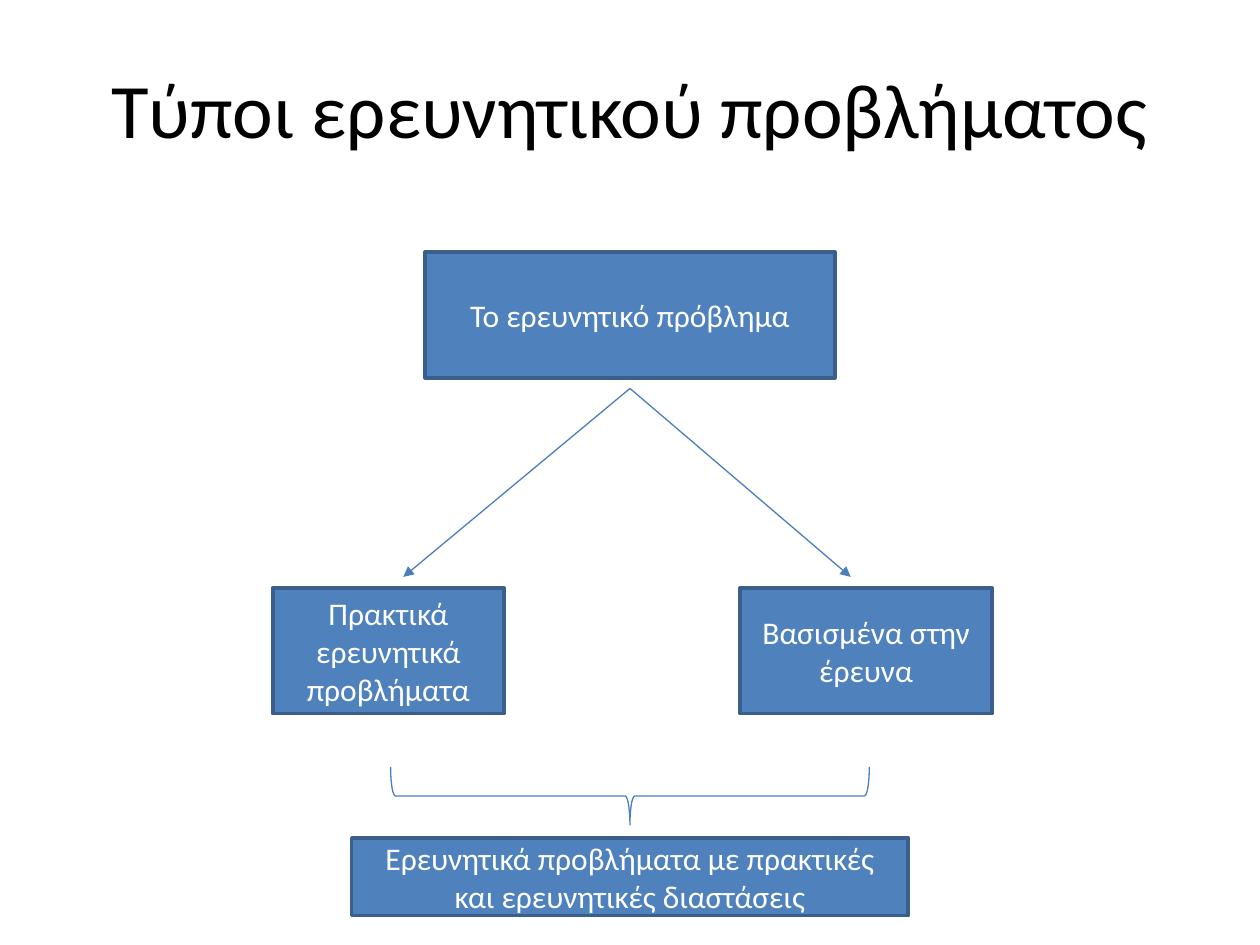
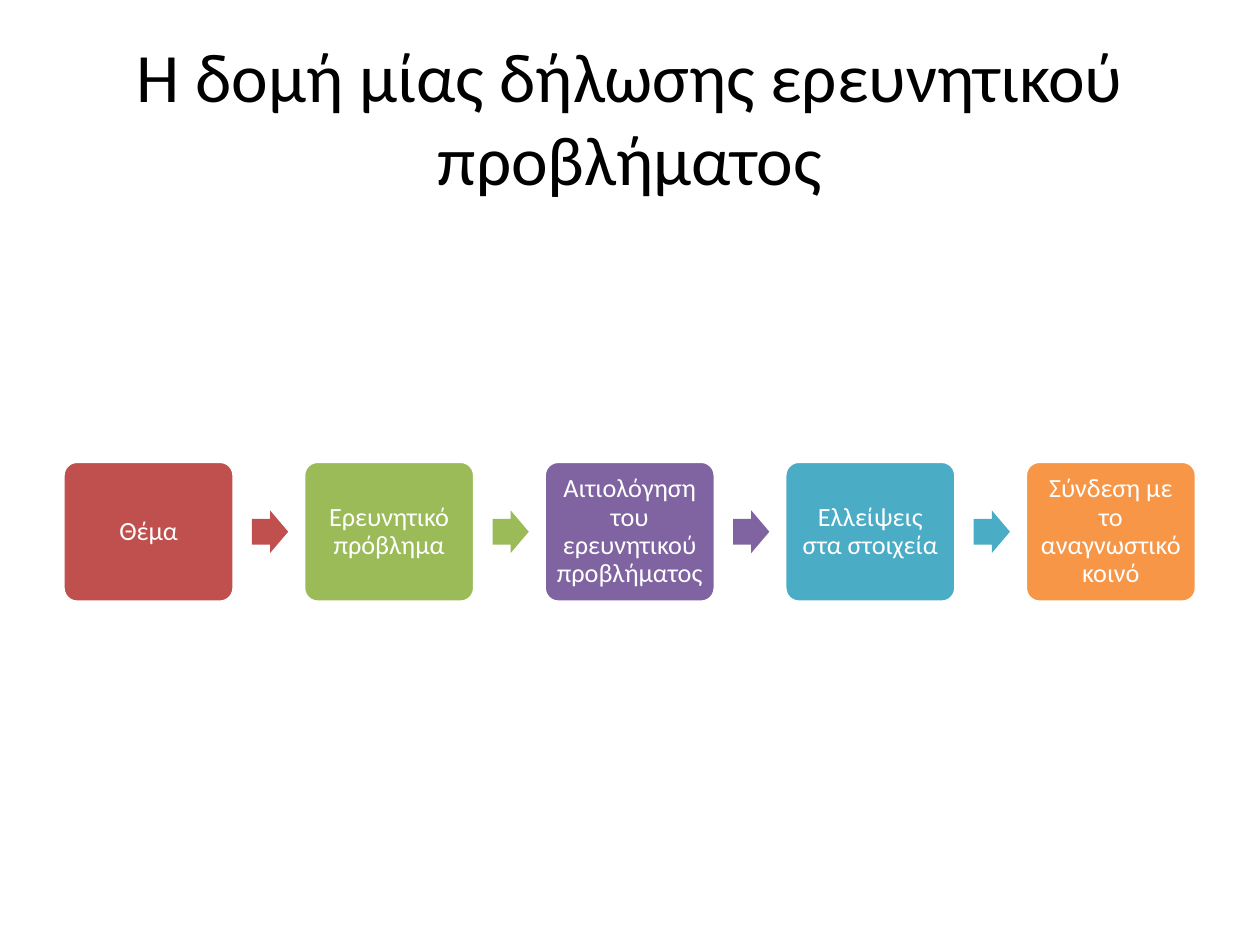
from lxml.etree import SubElement
from pptx import Presentation
from pptx.dml.color import RGBColor
from pptx.enum.shapes import MSO_CONNECTOR, MSO_SHAPE
from pptx.enum.text import MSO_ANCHOR, PP_ALIGN
from pptx.oxml.ns import qn
from pptx.util import Cm, Pt

# Shared style
FONT = "Calibri"
BLACK, WHITE = "000000", "FFFFFF"
BOX_FILL, BOX_LINE, LINK_LINE = "4F81BD", "3A5F8C", "4B7EBC"
SLIDE_WIDTH, SLIDE_HEIGHT = 25.4, 19.05
CENTER = SLIDE_WIDTH / 2
MARGIN = 1.27

# Structure of the statement: text and colour of each step
STEPS = [
    ("Θέμα", "C0504D"),
    ("Ερευνητικό πρόβλημα", "9BBB59"),
    ("Αιτιολόγηση του ερευνητικού προβλήματος", "8064A2"),
    ("Ελλείψεις στα στοιχεία", "4BACC6"),
    ("Σύνδεση με το αναγνωστικό κοινό", "F79646"),
]


def color(hex_string):
    return RGBColor.from_string(hex_string)


def write_text(shape, text, size=18, font_color=WHITE, spacing=None, inset=None):
    frame = shape.text_frame
    frame.word_wrap = True
    frame.vertical_anchor = MSO_ANCHOR.MIDDLE
    if inset is not None:
        frame.margin_left = frame.margin_right = Cm(inset)
        frame.margin_top = frame.margin_bottom = Cm(inset)
    paragraph = frame.paragraphs[0]
    paragraph.alignment = PP_ALIGN.CENTER
    if spacing:
        paragraph.line_spacing = spacing
    run = paragraph.add_run()
    run.text = text
    run.font.name = FONT
    run.font.size = Pt(size)
    run.font.color.rgb = color(font_color)


def add_title(slide, text, size, height):
    box = slide.shapes.add_textbox(
        Cm(MARGIN), Cm(0.76), Cm(SLIDE_WIDTH - 2 * MARGIN), Cm(height))
    write_text(box, text, size=size, font_color=BLACK)


def add_shape(slide, kind, left, top, width, height,
              fill=None, line=None, line_width=2):
    shape = slide.shapes.add_shape(kind, Cm(left), Cm(top), Cm(width), Cm(height))
    shape.shadow.inherit = False
    if fill:
        shape.fill.solid()
        shape.fill.fore_color.rgb = color(fill)
    else:
        shape.fill.background()
    if line:
        shape.line.color.rgb = color(line)
        shape.line.width = Pt(line_width)
    else:
        shape.line.fill.background()
    return shape


def add_box(slide, text, left, top, width, height=2.54):
    box = add_shape(slide, MSO_SHAPE.RECTANGLE, left, top, width, height,
                    fill=BOX_FILL, line=BOX_LINE)
    write_text(box, text)


def add_arrow(slide, start, end):
    arrow = slide.shapes.add_connector(
        MSO_CONNECTOR.STRAIGHT, *(Cm(value) for value in start + end))
    arrow.line.color.rgb = color(LINK_LINE)
    arrow.line.width = Pt(0.75)
    properties = arrow.line._get_or_add_ln()
    SubElement(properties, qn("a:tailEnd"), type="triangle")
    SubElement(properties.getparent(), qn("a:effectLst"))


def add_brace_below(slide, top, width, height):
    """Centred brace opening upwards: a left brace turned a quarter."""
    brace = add_shape(slide, MSO_SHAPE.LEFT_BRACE,
                      CENTER - height / 2, top + (height - width) / 2, height, width,
                      line=LINK_LINE, line_width=0.75)
    brace.rotation = 270


def add_steps(slide, steps):
    width, height, pitch, top = 3.45, 2.84, 4.85, 9.3
    arrow_width, arrow_height, arrow_offset = 0.73, 0.86, 3.81
    for index, (text, fill) in enumerate(steps):
        left = MARGIN + index * pitch
        step = add_shape(slide, MSO_SHAPE.ROUNDED_RECTANGLE, left, top, width, height,
                         fill=fill, line=WHITE)
        step.adjustments[0] = 0.1
        write_text(step, text, size=15, spacing=0.9, inset=0.14)
        if index < len(steps) - 1:
            arrow = add_shape(slide, MSO_SHAPE.RIGHT_ARROW, left + arrow_offset,
                              top + (height - arrow_height) / 2,
                              arrow_width, arrow_height, fill=fill)
            arrow.adjustments[0] = 0.6


def build_types_slide(slide):
    add_title(slide, "Τύποι ερευνητικού προβλήματος", size=44, height=2.84)

    # Problem and its two types
    add_box(slide, "Το ερευνητικό πρόβλημα", 8.57, 5.08, 8.26)
    add_box(slide, "Πρακτικά ερευνητικά προβλήματα", 5.5, 11.85, 4.66)
    add_box(slide, "Βασισμένα στην έρευνα", 14.92, 11.85, 5.08)
    for type_x in (8.13, 17.15):
        add_arrow(slide, (CENTER, 7.83), (type_x, 11.63))

    # Types combined
    add_brace_below(slide, top=15.46, width=9.65, height=1.17)
    add_box(slide, "Ερευνητικά προβλήματα με πρακτικές και ερευνητικές διαστάσεις",
            7.09, 16.89, 11.22, height=1.57)


def build_structure_slide(slide):
    add_title(slide, "Η δομή μίας δήλωσης ερευνητικού προβλήματος",
              size=39.6, height=3.18)
    add_steps(slide, STEPS)


def main():
    presentation = Presentation()
    presentation.slide_width = Cm(SLIDE_WIDTH)
    presentation.slide_height = Cm(SLIDE_HEIGHT)
    blank = presentation.slide_layouts[6]
    for build in (build_types_slide, build_structure_slide):
        build(presentation.slides.add_slide(blank))
    presentation.save("out.pptx")


if __name__ == "__main__":
    main()
